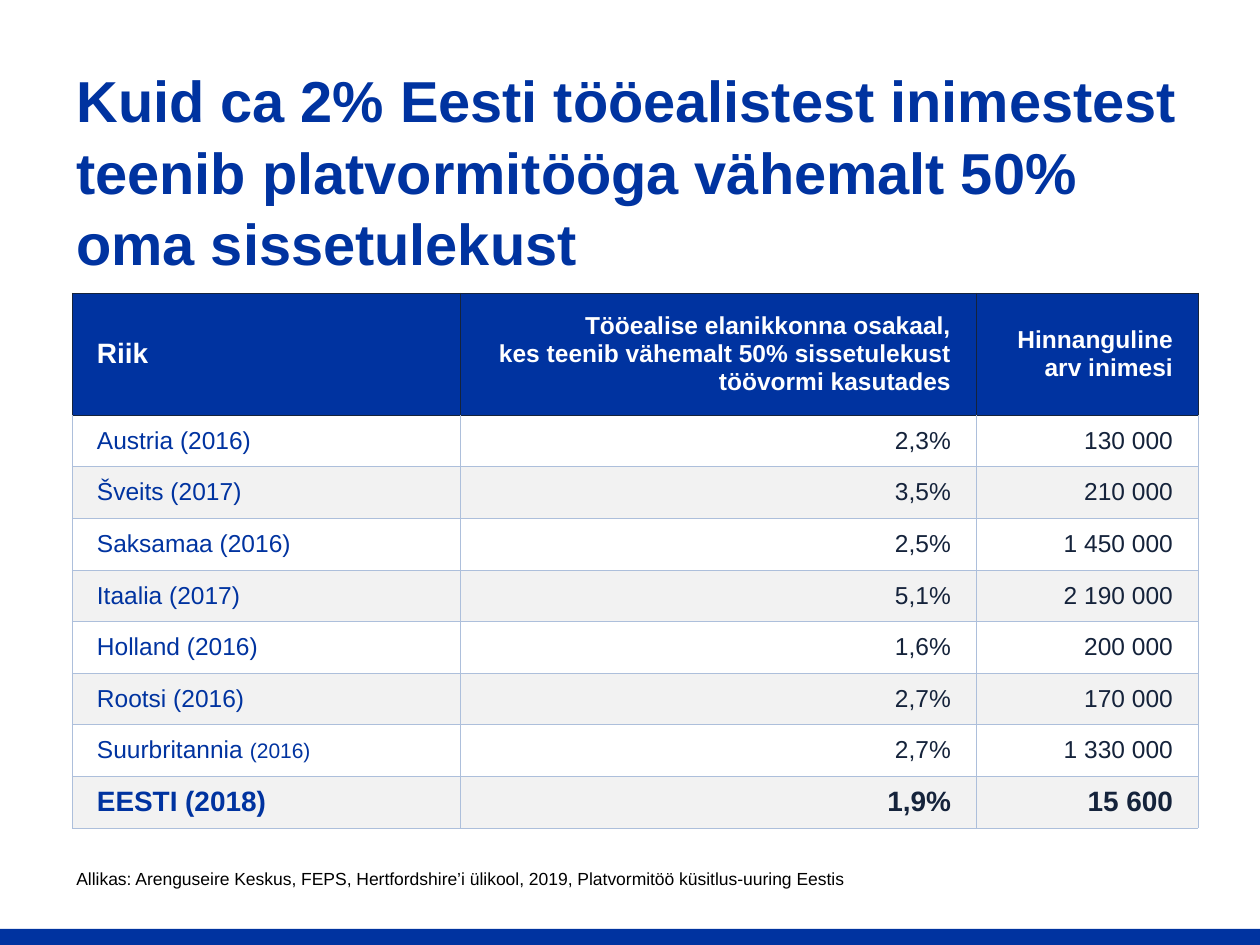
"""Build a slide on the share of people living mainly from platform work."""
from lxml import etree
from pptx import Presentation
from pptx.dml.color import RGBColor
from pptx.enum.shapes import MSO_SHAPE
from pptx.enum.text import MSO_ANCHOR, PP_ALIGN
from pptx.oxml.ns import qn
from pptx.util import Emu, Pt

RECTANGLE = MSO_SHAPE.RECTANGLE
MIDDLE, TOP = MSO_ANCHOR.MIDDLE, MSO_ANCHOR.TOP
LEFT, RIGHT = PP_ALIGN.LEFT, PP_ALIGN.RIGHT

BLUE, NAVY, PALE_BLUE = "0033A0", "15233B", "ADBFDB"
WHITE, GREY, BLACK = "FFFFFF", "F2F2F2", "000000"
FONT = "Arial"

TITLE = ("Kuid ca 2% Eesti tööealistest inimestest teenib platvormitööga "
         "vähemalt 50% oma sissetulekust")
SOURCE = ("Allikas: Arenguseire Keskus, FEPS, Hertfordshire’i ülikool, 2019, "
          "Platvormitöö küsitlus-uuring Eestis")
HEADER = (
    "Riik",
    "Tööealise elanikkonna osakaal,\nkes teenib vähemalt 50% sissetulekust töövormi kasutades",
    "Hinnanguline arv inimesi",
)
COUNTRIES = (
    ("Austria (2016)", "2,3%", "130 000"),
    ("Šveits (2017)", "3,5%", "210 000"),
    ("Saksamaa (2016)", "2,5%", "1 450 000"),
    ("Itaalia (2017)", "5,1%", "2 190 000"),
    ("Holland (2016)", "1,6%", "200 000"),
    ("Rootsi (2016)", "2,7%", "170 000"),
    ("Suurbritannia ", "2,7%", "1 330 000"),
    ("EESTI (2018)", "1,9%", "15 600"),
)
SMALL_YEAR_ROW, SMALL_YEAR = 7, "(2016)"

SLIDE_WIDTH, SLIDE_HEIGHT = 1260, 945
BAR_HEIGHT = 16
TABLE_LEFT, TABLE_TOP = 72, 293
COLUMN_WIDTHS = (388, 516, 222)
HEADER_HEIGHT, BODY_HEIGHT = 122, 413
CELL_INSET_X, CELL_INSET_Y = 25, 6


def px(length):
    return Emu(round(length * 914400 / 126))


def rgb(color):
    return RGBColor.from_string(color)


def style_run(run, size, color, bold=False):
    run.font.name = FONT
    run.font.size = Pt(size)
    run.font.bold = bold
    run.font.color.rgb = rgb(color)


def add_text(slide, box, text, size, color, bold=False, anchor=TOP, spacing=1.0):
    frame = slide.shapes.add_textbox(*map(px, box)).text_frame
    frame.word_wrap = True
    frame.vertical_anchor = anchor
    frame.text = text
    paragraph = frame.paragraphs[0]
    paragraph.line_spacing = spacing
    style_run(paragraph.runs[0], size, color, bold)


def set_borders(cell, colors):
    properties = cell._tc.get_or_add_tcPr()
    for position, (side, color) in enumerate(colors.items()):
        line = etree.Element(qn(f"a:ln{side}"), w=str(Pt(0.25)))
        fill = etree.SubElement(line, qn("a:solidFill"))
        etree.SubElement(fill, qn("a:srgbClr"), val=color)
        properties.insert(position, line)


def cell_style(row, column):
    """Return size, text colour, bold and fill of a cell."""
    if row == 0:
        return 16 if column == 0 else 14, WHITE, True, BLUE
    is_estonia = row == len(COUNTRIES)
    color = BLUE if column == 0 else NAVY
    return 16 if is_estonia else 14, color, is_estonia, WHITE if row % 2 else GREY


def fill_cell(cell, text, row, column):
    size, color, bold, background = cell_style(row, column)
    cell.fill.solid()
    cell.fill.fore_color.rgb = rgb(background)
    cell.vertical_anchor = MIDDLE
    cell.margin_left = cell.margin_right = px(CELL_INSET_X)
    cell.margin_top = cell.margin_bottom = px(CELL_INSET_Y)
    paragraph = cell.text_frame.paragraphs[0]
    paragraph.text = text
    paragraph.alignment = RIGHT if column else LEFT
    for run in paragraph.runs:
        style_run(run, size, color, bold)
    if (row, column) == (SMALL_YEAR_ROW, 0):
        year = paragraph.add_run()
        year.text = SMALL_YEAR
        style_run(year, 12, color)
    edge = PALE_BLUE if row else NAVY
    top_edge = NAVY if row < 2 else PALE_BLUE
    set_borders(cell, {"L": edge, "R": edge, "T": top_edge, "B": edge})


def add_country_table(slide):
    rows = (HEADER, *COUNTRIES)
    table = slide.shapes.add_table(
        len(rows), len(HEADER), px(TABLE_LEFT), px(TABLE_TOP),
        px(sum(COLUMN_WIDTHS)), px(HEADER_HEIGHT + BODY_HEIGHT)).table
    for column, width in zip(table.columns, COLUMN_WIDTHS):
        column.width = px(width)
    for row, texts in enumerate(rows):
        table.rows[row].height = px(BODY_HEIGHT / len(COUNTRIES) if row else HEADER_HEIGHT)
        for column, text in enumerate(texts):
            fill_cell(table.cell(row, column), text, row, column)


def main():
    deck = Presentation()
    deck.slide_width, deck.slide_height = px(SLIDE_WIDTH), px(SLIDE_HEIGHT)
    slide = deck.slides.add_slide(deck.slide_layouts[6])
    bar = slide.shapes.add_shape(
        RECTANGLE, 0, px(SLIDE_HEIGHT - BAR_HEIGHT), px(SLIDE_WIDTH), px(BAR_HEIGHT))
    bar.shadow.inherit = False
    bar.fill.solid()
    bar.fill.fore_color.rgb = rgb(BLUE)
    bar.line.fill.background()
    add_text(slide, (64, 91, 1134, 158), TITLE, 33, BLUE, True, MIDDLE, 1.03)
    add_country_table(slide)
    add_text(slide, (64, 862, 1111, 34), SOURCE, 10, BLACK)
    deck.save("out.pptx")


if __name__ == "__main__":
    main()
